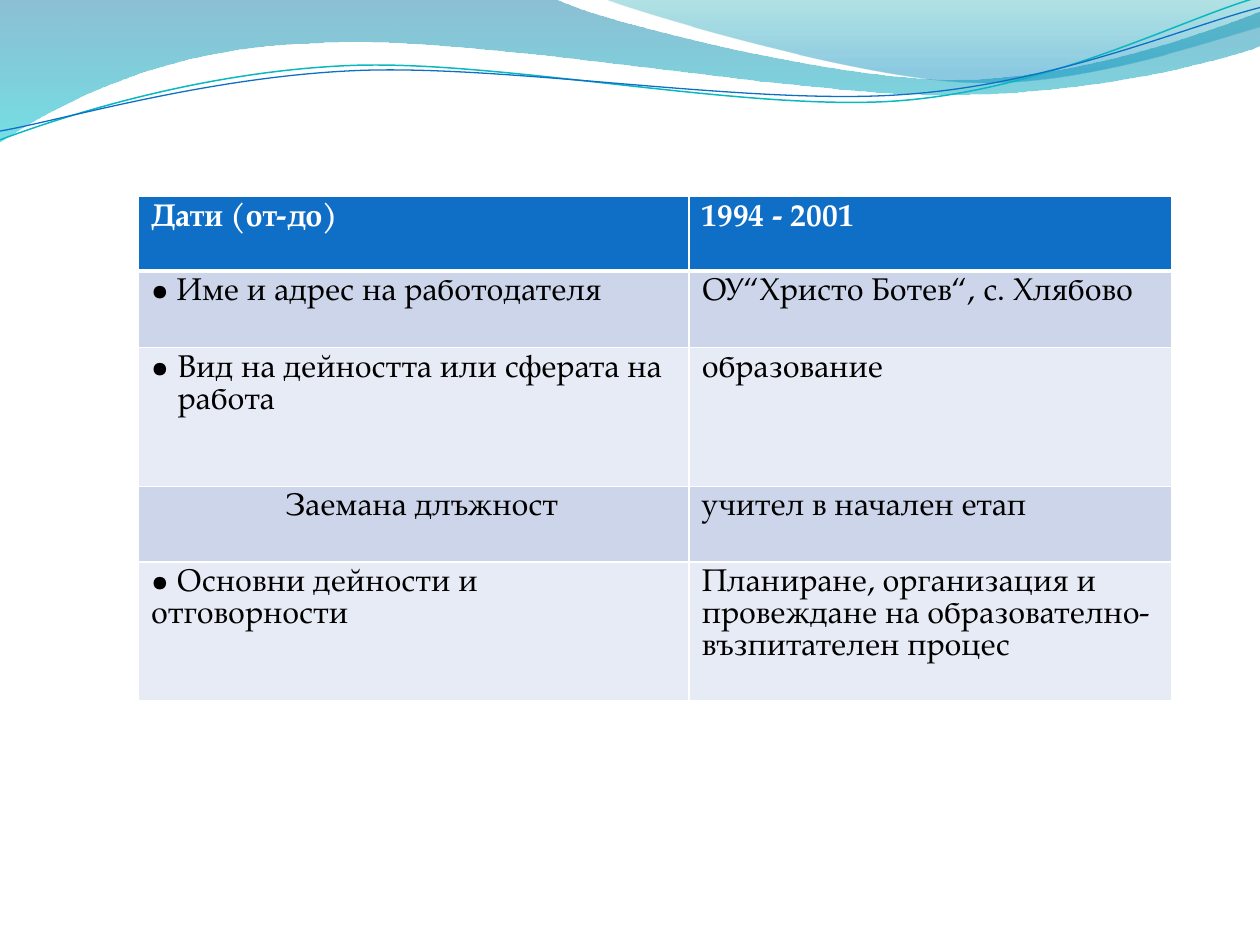
from math import cos, radians, sin

from lxml.etree import SubElement
from pptx import Presentation
from pptx.dml.color import RGBColor
from pptx.oxml.ns import qn
from pptx.util import Inches, Pt

FONT = "TeX Gyre Pagella"
WHITE = RGBColor(0xFF, 0xFF, 0xFF)
BLACK = RGBColor(0, 0, 0)
BLUE = RGBColor(0x0F, 0x6F, 0xC6)
TEAL = RGBColor(0x0A, 0xB8, 0xBF)
DEEP_BLUE = RGBColor(0x00, 0x74, 0xA1)
AQUA = RGBColor(0x00, 0xC6, 0xCF)
GREEN = RGBColor(0x00, 0xA1, 0xA9)
SKY = RGBColor(0x00, 0x8B, 0xBF)
BAND_DARK = RGBColor(0xCC, 0xD5, 0xEA)
BAND_LIGHT = RGBColor(0xE7, 0xEB, 0xF5)

TILT = 357.3
CURVE_CENTER = (4.99, 0.58)

BACK_WAVE = [
    (0, 0), (4.4, -0.01),
    (4.76, 0.17, 6.64, 0.63, 7.58, 0.63), (8.53, 0.63, 9.58, 0.26, 10, 0.09),
    (10.01, 0.36),
    (9.83, 0.44, 8.7, 0.76, 7.46, 0.75), (6.22, 0.75, 3.82, 0.28, 2.57, 0.34),
    (1.29, 0.36, 0.46, 0.83, -0.01, 1.13), (0, 0),
]
FRONT_WAVE = [
    (4.79, -0.01),
    (5.09, 0.11, 6.82, 0.62, 7.69, 0.65), (8.56, 0.69, 9.61, 0.32, 10, 0.21),
    (10, 0), (4.79, -0.01),
]
TEAL_CURVE = [
    (0, 1.11),
    (0.48, 0.93, 1.58, 0.57, 2.77, 0.52), (3.95, 0.47, 5.93, 0.89, 7.13, 0.8),
    (8.33, 0.71, 9.38, 0.15, 9.98, -0.02),
]
BLUE_CURVE = [
    (0, 1.04),
    (0.47, 0.96, 1.64, 0.61, 2.83, 0.56), (4.03, 0.51, 5.97, 0.84, 7.17, 0.75),
    (8.36, 0.67, 9.41, 0.21, 10, 0.06),
]

COL_WIDTHS = [4.37, 3.83]
ROWS = [
    (0.59, "Дати (от-до)", "1994 - 2001", None, 0, 0),
    (0.61, " Име и адрес на работодателя", "ОУ“Христо Ботев“, с. Хлябово", "•", 0, 0),
    (1.1, "Вид на дейността или сферата на работа", "образование", "•", 0.21, 0),
    (0.6, " Заемана длъжност", "учител в начален етап", None, 1, 1),
    (1.1, " Основни дейности и отговорности",
     "Планиране, организация и провеждане на образователно-възпитателен процес", "•", 0, 0),
]


def untilt(path):
    """Turn a path back about the curve centre so that the tilt restores it."""
    a = radians(360 - TILT)
    cx, cy = CURVE_CENTER
    return [
        [v for x, y in zip(seg[::2], seg[1::2])
         for v in (cx + (x - cx) * cos(a) - (y - cy) * sin(a),
                   cy + (x - cx) * sin(a) + (y - cy) * cos(a))]
        for seg in path
    ]


def add_outline(slide, path, close):
    """Add a shadowless freeform whose six-number segments are Bezier curves."""
    pts = [(Inches(x), Inches(y)) for seg in path for x, y in zip(seg[::2], seg[1::2])]
    builder = slide.shapes.build_freeform(*pts[0])
    builder.add_line_segments(pts[1:], close=close)
    sp = builder.convert_to_shape()
    sp.shadow.inherit = False
    lines = iter(sp._element.findall(f".//{qn('a:lnTo')}"))
    for seg in path[1:]:
        first = next(lines)
        if len(seg) == 6:
            first.tag = qn("a:cubicBezTo")
            for extra in (next(lines), next(lines)):
                first.append(extra[0])
                extra.getparent().remove(extra)
    return sp


def add_wave(slide, path, stops):
    """Add a wave with a translucent top-to-bottom gradient."""
    sp = add_outline(slide, path, True)
    sp.line.fill.background()
    sp.fill.gradient()
    sp.fill.gradient_angle = 270
    for stop, (pos, color, _) in zip(sp.fill.gradient_stops, stops):
        stop.position = pos
        stop.color.rgb = color
    for clr, (_, _, opacity) in zip(sp._element.spPr.iter(qn("a:srgbClr")), stops):
        SubElement(clr, qn("a:alpha"), val=str(opacity * 1000))


def add_curve(slide, path, color, width):
    """Add an open curved line with a slight tilt."""
    sp = add_outline(slide, untilt(path), False)
    sp.rotation = TILT
    sp.fill.background()
    sp.line.color.rgb = color
    sp.line.width = Pt(width)


def set_borders(cell, bottom):
    """Give a cell white borders, in front of its fill."""
    tcPr = cell._tc.get_or_add_tcPr()
    for i, (side, width) in enumerate([("L", 1), ("R", 1), ("T", 1), ("B", bottom)]):
        ln = SubElement(tcPr, qn(f"a:ln{side}"), w=str(Pt(width)))
        fill = SubElement(ln, qn("a:solidFill"))
        SubElement(fill, qn("a:srgbClr"), val=str(WHITE))
        tcPr.insert(i, ln)


def fill_cell(cell, text, fill, header, bullet=None, indent=0, level=0):
    """Write and format one table cell."""
    cell.fill.solid()
    cell.fill.fore_color.rgb = fill
    set_borders(cell, 3 if header else 1)
    p = cell.text_frame.paragraphs[0]
    p.text = text
    p.level = level
    p.line_spacing = Pt(18.3)
    r = p.runs[0]
    r.font.name = FONT
    r.font.size = Pt(18)
    r.font.bold = header
    r.font.color.rgb = WHITE if header else BLACK
    pPr = p._p.get_or_add_pPr()
    pPr.set("marL", str(Inches(indent)))
    pPr.set("indent", str(-Inches(indent) if bullet else 0))
    if bullet:
        SubElement(pPr, qn("a:buFont"), typeface=FONT)
        SubElement(pPr, qn("a:buChar"), char=bullet)


def add_job_table(slide):
    """Add the table of job details."""
    total = sum(row[0] for row in ROWS)
    frame = slide.shapes.add_table(len(ROWS), len(COL_WIDTHS), Inches(1.1), Inches(1.56),
                                   Inches(sum(COL_WIDTHS)), Inches(total))
    table = frame.table
    for col, width in zip(table.columns, COL_WIDTHS):
        col.width = Inches(width)
    for i, (height, label, value, bullet, indent, level) in enumerate(ROWS):
        table.rows[i].height = Inches(height)
        header = i == 0
        fill = BLUE if header else (BAND_LIGHT, BAND_DARK)[i % 2]
        fill_cell(table.cell(i, 0), label, fill, header, bullet, indent, level)
        fill_cell(table.cell(i, 1), value, fill, header)


def main():
    """Build and save the slide."""
    prs = Presentation()
    prs.slide_width, prs.slide_height = Inches(10), Inches(7.5)
    slide = prs.slides.add_slide(prs.slide_layouts[6])
    add_wave(slide, BACK_WAVE, [(0, DEEP_BLUE, 45), (1, AQUA, 55)])
    add_wave(slide, FRONT_WAVE, [(0, GREEN, 30), (0.8, SKY, 45)])
    add_curve(slide, TEAL_CURVE, TEAL, 0.85)
    add_curve(slide, BLUE_CURVE, BLUE, 0.75)
    add_job_table(slide)
    prs.save("out.pptx")


if __name__ == "__main__":
    main()
